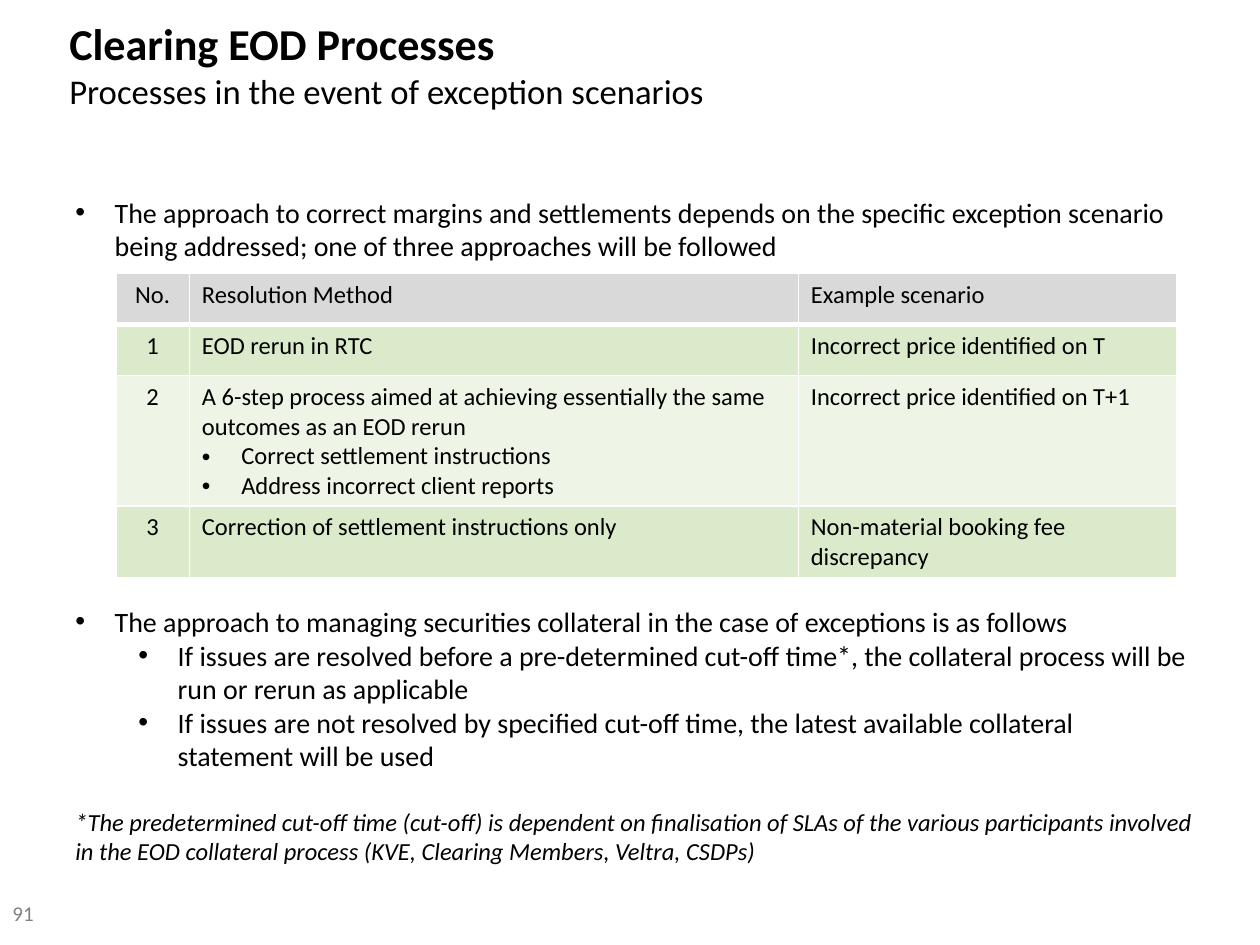
"""Build the slide on clearing end-of-day exception processes."""
from lxml.etree import SubElement
from pptx import Presentation
from pptx.dml.color import RGBColor
from pptx.enum.text import MSO_ANCHOR, MSO_AUTO_SIZE, PP_ALIGN
from pptx.oxml.ns import qn
from pptx.util import Pt

COLORS = {
    "text": "000000",
    "page": "808080",
    "border": "FFFFFF",
    "header": "D9D9D9",
    "odd": "DCEACC",
    "even": "EEF5E7",
}
BULLET_INDENT = 22.5


def write(paragraph, text, size=16, color="text", bold=False, italic=False,
          align=PP_ALIGN.LEFT, bullet_at=None, before=0):
    paragraph.alignment = align
    if before:
        paragraph.space_before = Pt(before)
    if bullet_at is not None:
        properties = paragraph._p.get_or_add_pPr()
        properties.set("marL", str(Pt(bullet_at)))
        properties.set("indent", str(-Pt(BULLET_INDENT)))
        SubElement(properties, qn("a:buFont"), typeface="Arial")
        SubElement(properties, qn("a:buChar"), char="•")
    run = paragraph.add_run()
    run.text = text
    font = run.font
    font.name = "Calibri"
    font.size = Pt(size)
    font.bold = bold
    font.italic = italic
    font.color.rgb = RGBColor.from_string(COLORS[color])


class SlideBuilder:
    def __init__(self, presentation):
        self.slide = presentation.slides.add_slide(presentation.slide_layouts[5])

    def fill_frame(self, frame, items, **style):
        for index, (text, options) in enumerate(items):
            paragraph = frame.add_paragraph() if index else frame.paragraphs[0]
            write(paragraph, text, **{**style, **options})

    def title(self, heading, subheading, left, top, width, height):
        title = self.slide.shapes.title
        title.left, title.top = Pt(left), Pt(top)
        title.width, title.height = Pt(width), Pt(height)
        frame = title.text_frame
        frame.auto_size = MSO_AUTO_SIZE.NONE
        frame.vertical_anchor = MSO_ANCHOR.TOP
        paragraph = frame.paragraphs[0]
        write(paragraph, heading, size=25.2, bold=True)
        paragraph.add_line_break()
        write(paragraph, subheading, size=19.8)

    def text(self, items, left, top, width, height, **style):
        box = self.slide.shapes.add_textbox(Pt(left), Pt(top), Pt(width), Pt(height))
        box.text_frame.word_wrap = True
        self.fill_frame(box.text_frame, items, **style)

    def border(self, cell, header):
        properties = cell._tc.get_or_add_tcPr()
        for side in "LRTB":
            width = 3 if header and side == "B" else 1
            line = SubElement(properties, qn(f"a:ln{side}"), w=str(Pt(width)))
            fill = SubElement(line, qn("a:solidFill"))
            SubElement(fill, qn("a:srgbClr"), val=COLORS["border"])

    def table(self, rows, left, top, widths, heights):
        table = self.slide.shapes.add_table(
            len(rows), len(widths), Pt(left), Pt(top),
            Pt(sum(widths)), Pt(sum(heights))).table
        table.first_row = table.horz_banding = False
        for column, width in zip(table.columns, widths):
            column.width = Pt(width)
        for row_index, (row, height) in enumerate(zip(rows, heights)):
            table.rows[row_index].height = Pt(height)
            shade = ("odd" if row_index % 2 else "even") if row_index else "header"
            for column_index, content in enumerate(row):
                cell = table.cell(row_index, column_index)
                self.border(cell, header=row_index == 0)
                cell.fill.solid()
                cell.fill.fore_color.rgb = RGBColor.from_string(COLORS[shade])
                items = [(content, {})] if isinstance(content, str) else content
                align = PP_ALIGN.LEFT if column_index else PP_ALIGN.CENTER
                self.fill_frame(cell.text_frame, items, size=14, align=align)


def main():
    presentation = Presentation()
    presentation.slide_width, presentation.slide_height = Pt(720), Pt(540)
    builder = SlideBuilder(presentation)
    first_level = {"bullet_at": BULLET_INDENT}
    second_level = {"bullet_at": 36 + BULLET_INDENT}

    builder.title("Clearing EOD Processes",
                  "Processes in the event of exception scenarios",
                  32.4, 6, 514, 59)
    builder.text([
        ("The approach to correct margins and settlements depends on the specific "
         "exception scenario being addressed; one of three approaches will be followed",
         first_level),
    ], 36, 108, 654, 46)

    resolution_methods = [
        ("No.", "Resolution Method", "Example scenario"),
        ("1", "EOD rerun in RTC", "Incorrect price identified on T"),
        ("2", [
            ("A 6-step process aimed at achieving essentially the same outcomes "
             "as an EOD rerun", {}),
            ("Correct settlement instructions", first_level),
            ("Address incorrect client reports", first_level),
        ], "Incorrect price identified on T+1"),
        ("3", "Correction of settlement instructions only",
         "Non-material booking fee discrepancy"),
    ]
    builder.table(resolution_methods, 66.2, 156.3, [42, 348, 216], [29.2] * 4)

    builder.text([
        ("The approach to managing securities collateral in the case of exceptions "
         "is as follows", first_level),
        ("If issues are resolved before a pre-determined cut-off time*, the "
         "collateral process will be run or rerun as applicable", second_level),
        ("If issues are not resolved by specified cut-off time, the latest available "
         "collateral statement will be used", second_level),
        ("*The predetermined cut-off time (cut-off) is dependent on finalisation of "
         "SLAs of the various participants involved in the EOD collateral process "
         "(KVE, Clearing Members, Veltra, CSDPs)",
         {"size": 14, "italic": True, "before": 19.5}),
    ], 36, 342, 654, 163)
    builder.text([("91", {})], 0, 511, 42.5, 29, size=12, color="page")
    presentation.save("out.pptx")


if __name__ == "__main__":
    main()
